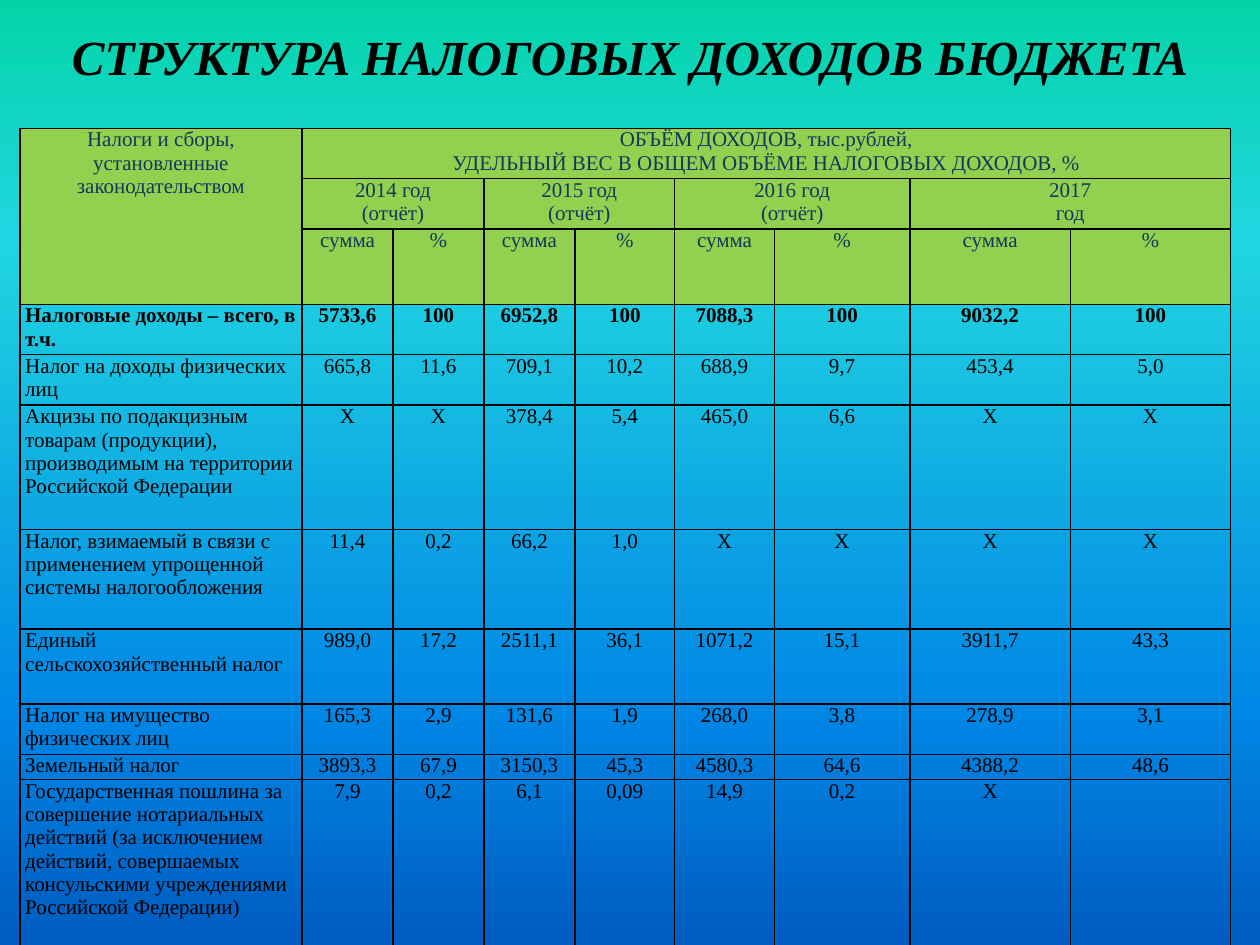
"""Build a slide with a table of the structure of tax revenues."""
from lxml import etree
from pptx import Presentation
from pptx.dml.color import RGBColor
from pptx.enum.text import MSO_ANCHOR, PP_ALIGN
from pptx.oxml import parse_xml
from pptx.oxml.ns import qn
from pptx.util import Pt

CENTER, LEFT, MIDDLE = PP_ALIGN.CENTER, PP_ALIGN.LEFT, MSO_ANCHOR.MIDDLE
FONT = "Times New Roman"
COLORS = {"text": "000000", "header": "17365D", "header_fill": "92D050", "border": "000000"}
GRADIENT = [(0, "03D4A8"), (25, "21D6E0"), (75, "0087E6"), (100, "005CBF")]

TITLE = "СТРУКТУРА НАЛОГОВЫХ ДОХОДОВ БЮДЖЕТА"
TAX_HEADER = "Налоги и сборы, установленные законодательством"
VOLUME_HEADER = "ОБЪЁМ ДОХОДОВ, тыс.рублей,\nУДЕЛЬНЫЙ ВЕС В ОБЩЕМ ОБЪЁМЕ НАЛОГОВЫХ ДОХОДОВ, %"
YEARS = ["2014 год\n(отчёт)", "2015 год\n(отчёт)", "2016 год\n(отчёт)", "2017\nгод"]
MEASURES = ["сумма", "%"]
TAXES = [
    ("Налоговые доходы – всего, в т.ч.",
     "5733,6", "100", "6952,8", "100", "7088,3", "100", "9032,2", "100"),
    ("Налог на доходы физических лиц",
     "665,8", "11,6", "709,1", "10,2", "688,9", "9,7", "453,4", "5,0"),
    ("Акцизы по подакцизным товарам (продукции), производимым на территории Российской Федерации",
     "Х", "Х", "378,4", "5,4", "465,0", "6,6", "Х", "Х"),
    ("Налог, взимаемый в связи с применением упрощенной системы налогообложения",
     "11,4", "0,2", "66,2", "1,0", "Х", "Х", "Х", "Х"),
    ("Единый сельскохозяйственный налог",
     "989,0", "17,2", "2511,1", "36,1", "1071,2", "15,1", "3911,7", "43,3"),
    ("Налог на имущество физических лиц",
     "165,3", "2,9", "131,6", "1,9", "268,0", "3,8", "278,9", "3,1"),
    ("Земельный налог",
     "3893,3", "67,9", "3150,3", "45,3", "4580,3", "64,6", "4388,2", "48,6"),
    ("Государственная пошлина за совершение нотариальных действий (за исключением действий, "
     "совершаемых консульскими учреждениями Российской Федерации)",
     "7,9", "0,2", "6,1", "0,09", "14,9", "0,2", "Х", ""),
]
COL_WIDTHS = [161.2, 52, 52, 52, 57, 57, 77.4, 91.8, 91.5]
ROW_HEIGHTS = [28.8, 28.8, 43, 28.8, 28.8, 71.2, 56.8, 42.8, 28.8, 14.4, 114]
HEADER_ROWS = 3
TOTAL_ROW = 3


def set_background(s):
    stops = "".join(f'<a:gs pos="{pos * 1000}"><a:srgbClr val="{color}"/></a:gs>'
                    for pos, color in GRADIENT)
    bg = parse_xml(
        '<p:bg xmlns:p="http://schemas.openxmlformats.org/presentationml/2006/main" '
        'xmlns:a="http://schemas.openxmlformats.org/drawingml/2006/main">'
        f'<p:bgPr><a:gradFill rotWithShape="1"><a:gsLst>{stops}</a:gsLst>'
        '<a:lin ang="5400000" scaled="0"/></a:gradFill><a:effectLst/></p:bgPr></p:bg>')
    s.element.cSld.insert(0, bg)


def write(tf, text, size, color, align, bold=False, italic=False):
    tf.text = text
    for p in tf.paragraphs:
        p.alignment = align
        for r in p.runs:
            r.font.name, r.font.size = FONT, Pt(size)
            r.font.bold, r.font.italic = bold, italic
            r.font.color.rgb = RGBColor.from_string(color)


def set_borders(cell):
    tc_pr = cell._tc.get_or_add_tcPr()
    for side in ("lnL", "lnR", "lnT", "lnB"):
        ln = etree.SubElement(tc_pr, qn(f"a:{side}"), w=str(Pt(1)))
        fill = etree.SubElement(ln, qn("a:solidFill"))
        etree.SubElement(fill, qn("a:srgbClr"), val=COLORS["border"])


def add_tax_table(s):
    blank_years = [text for year in YEARS for text in (year, "")]
    rows = [[TAX_HEADER, VOLUME_HEADER] + [""] * 7,
            [""] + blank_years,
            [""] + MEASURES * len(YEARS),
            *TAXES]
    table = s.shapes.add_table(len(rows), len(COL_WIDTHS), Pt(11.4), Pt(73.3),
                               Pt(sum(COL_WIDTHS)), Pt(sum(ROW_HEIGHTS))).table
    table.first_row = table.horz_banding = False
    for column, width in zip(table.columns, COL_WIDTHS):
        column.width = Pt(width)
    for row, height in zip(table.rows, ROW_HEIGHTS):
        row.height = Pt(height)

    for i, texts in enumerate(rows):
        header = i < HEADER_ROWS
        for j, text in enumerate(texts):
            cell = table.cell(i, j)
            cell.margin_left = cell.margin_right = Pt(3)
            cell.margin_top = cell.margin_bottom = 0
            set_borders(cell)
            if header:
                cell.fill.solid()
                cell.fill.fore_color.rgb = RGBColor.from_string(COLORS["header_fill"])
            else:
                cell.fill.background()
            write(cell.text_frame, text, 12, COLORS["header" if header else "text"],
                  CENTER if header or j else LEFT, bold=i == TOTAL_ROW)

    table.cell(0, 0).merge(table.cell(HEADER_ROWS - 1, 0))
    table.cell(0, 1).merge(table.cell(0, len(COL_WIDTHS) - 1))
    for j in range(1, len(COL_WIDTHS), len(MEASURES)):
        table.cell(1, j).merge(table.cell(1, j + 1))


def add_title(s):
    tf = s.shapes.add_textbox(0, Pt(11.5), Pt(720), Pt(41)).text_frame
    tf.word_wrap = True
    tf.vertical_anchor = MIDDLE
    write(tf, TITLE, 28, COLORS["text"], CENTER, bold=True, italic=True)


def main():
    prs = Presentation()
    prs.slide_width, prs.slide_height = Pt(720), Pt(540)
    s = prs.slides.add_slide(prs.slide_layouts[6])
    set_background(s)
    add_tax_table(s)
    add_title(s)
    prs.save("out.pptx")


if __name__ == "__main__":
    main()
